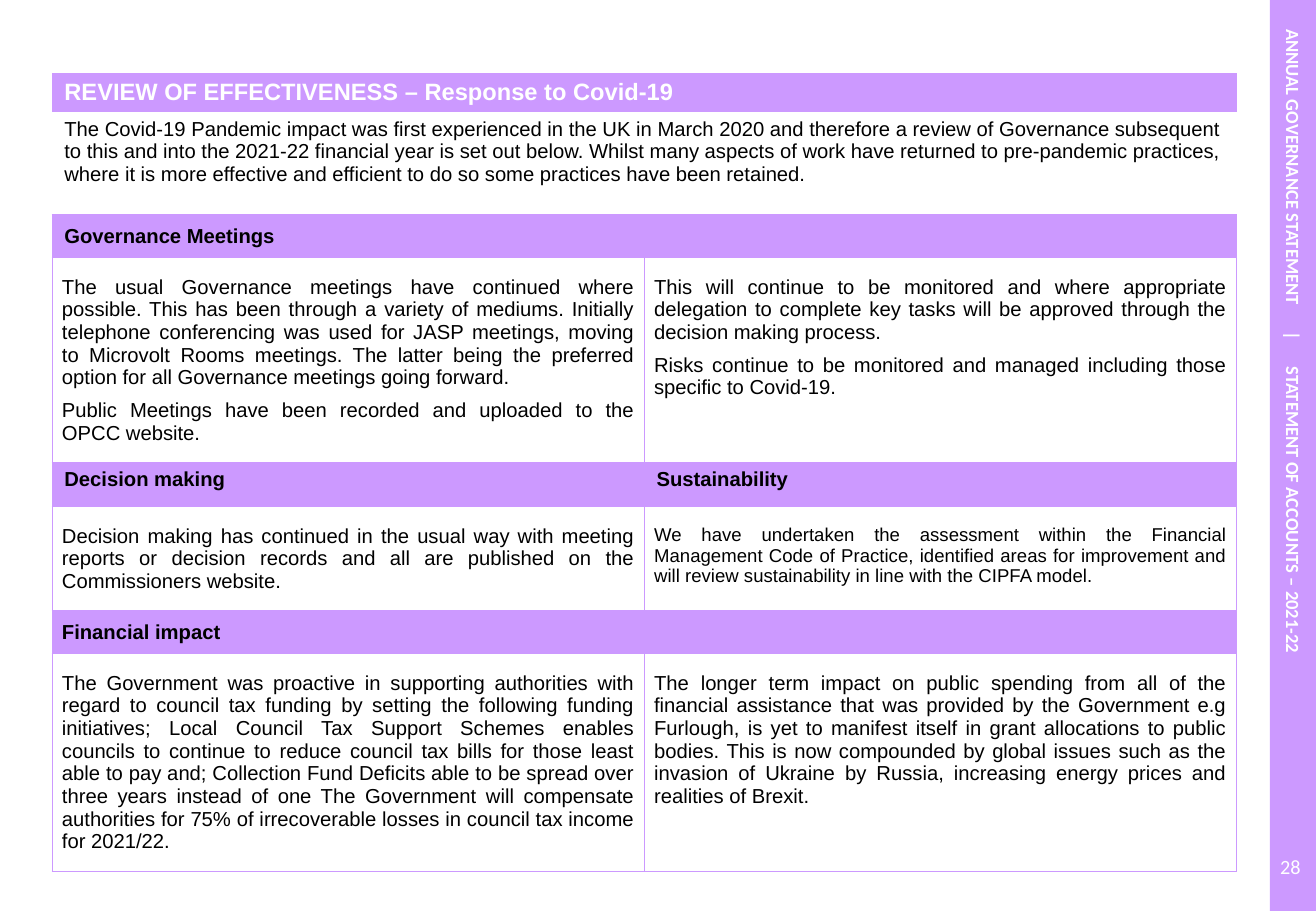
from lxml import etree
from pptx import Presentation
from pptx import util as u
from pptx.dml.color import RGBColor
from pptx.enum import shapes, text
from pptx.oxml import ns

COLORS = {"lilac": "CC99FF", "white": "FFFFFF", "black": "000000"}
PAGE_W, PAGE_H = 10.83, 7.5
HEADING = {"fill": "lilac", "bold": True, "anchor": "MIDDLE", "margins": (0.1, 0.04), "after": 6}
LABEL = HEADING | {"anchor": "TOP"}
BODY = {"margins": (0.08, 0.15), "after": 6}
TITLE = {"fill": "lilac", "bold": True, "anchor": "MIDDLE", "size": 14, "color": "white",
         "align": "LEFT", "borders": ""}
INTRO = {"align": "LEFT", "borders": "B"}
DEFAULTS = {"fill": None, "bold": False, "anchor": "TOP", "margins": (0.1, 0.05), "after": 0,
            "size": 12, "color": "black", "align": "JUSTIFY", "borders": "LRTB"}

review = [
    (0.32, TITLE, ["REVIEW OF EFFECTIVENESS – Response to Covid-19"]),
    (0.85, INTRO, [
        "The Covid-19 Pandemic impact was first experienced in the UK in March 2020 and therefore a review of "
        "Governance subsequent to this and into the 2021-22 financial year is set out below. Whilst many aspects "
        "of work have returned to pre-pandemic practices, where it is more effective and efficient to do so some "
        "practices have been retained."]),
    (0.35, HEADING, ["Governance Meetings"]),
    (1.68, BODY, [
        "The usual Governance meetings have continued where possible. This has been through a variety of mediums. "
        "Initially telephone conferencing was used for JASP meetings, moving to Microvolt Rooms meetings. The "
        "latter being the preferred option for all Governance meetings going forward.\n"
        "Public Meetings have been recorded and uploaded to the OPCC website.",
        "This will continue to be monitored and where appropriate delegation to complete key tasks will be "
        "approved through the decision making process.\n"
        "Risks continue to be monitored and managed including those specific to Covid-19."]),
    (0.36, LABEL, ["Decision making", "Sustainability"]),
    (0.86, BODY, [
        "Decision making has continued in the usual way with meeting reports or decision records and all are "
        "published on the Commissioners website.",
        "We have undertaken the assessment within the Financial Management Code of Practice, identified areas for "
        "improvement and will review sustainability in line with the CIPFA model."]),
    (0.35, HEADING | {"margins": (0.08, 0.04)}, ["Financial impact"]),
    (1.79, BODY | {"after": 8}, [
        "The Government was proactive in supporting authorities with regard to council tax funding by setting the "
        "following funding initiatives; Local Council Tax Support Schemes enables councils to continue to reduce "
        "council tax bills for those least able to pay and; Collection Fund Deficits able to be spread over three "
        "years instead of one The Government will compensate authorities for 75% of irrecoverable losses in "
        "council tax income for 2021/22.",
        "The longer term impact on public spending from all of the financial assistance that was provided by the "
        "Government e.g Furlough, is yet to manifest itself in grant allocations to public bodies. This is now "
        "compounded by global issues such as the invasion of Ukraine by Russia, increasing energy prices and "
        "realities of Brexit."]),
]


def style_font(font, **values):
    font.color.rgb = RGBColor.from_string(COLORS[values.pop("color")])
    for key, value in values.items():
        setattr(font, key, value)


def add_border(cell, side, position, visible):
    line = etree.Element(ns.qn(f"a:ln{side}"), w=str(u.Pt(1)))
    if visible:
        fill = etree.SubElement(line, ns.qn("a:solidFill"))
        etree.SubElement(fill, ns.qn("a:srgbClr"), val=COLORS["lilac"])
    else:
        etree.SubElement(line, ns.qn("a:noFill"))
    cell._tc.get_or_add_tcPr().insert(position, line)


deck = Presentation()
deck.slide_width, deck.slide_height = u.Inches(PAGE_W), u.Inches(PAGE_H)
page = deck.slides.add_slide(deck.slide_layouts[6])

total = sum(height for height, _, _ in review)
table = page.shapes.add_table(len(review), 2, u.Inches(0.43), u.Inches(PAGE_H * 0.08),
                              u.Inches(PAGE_W * 0.9), u.Inches(total)).table
table.first_row = table.horz_banding = False
for column in table.columns:
    column.width = u.Inches(PAGE_W * 0.45)

for index, (height, changes, contents) in enumerate(review):
    look = DEFAULTS | changes
    table.rows[index].height = u.Inches(height)
    if len(contents) == 1:
        table.cell(index, 0).merge(table.cell(index, 1))
    for cell in table.rows[index].cells:
        if look["fill"]:
            cell.fill.solid()
            cell.fill.fore_color.rgb = RGBColor.from_string(COLORS[look["fill"]])
        else:
            cell.fill.background()
        for position, side in enumerate("LRTB"):
            add_border(cell, side, position, side in look["borders"])
    for side, content in enumerate(contents):
        cell = table.cell(index, side)
        across, down = map(u.Inches, look["margins"])
        cell.margin_left = cell.margin_right = across
        cell.margin_top = cell.margin_bottom = down
        cell.vertical_anchor = text.MSO_ANCHOR[look["anchor"]]
        cell.text = content
        size = 11 if content.startswith("We have undertaken") else look["size"]
        for paragraph in cell.text_frame.paragraphs:
            paragraph.alignment = text.PP_ALIGN[look["align"]]
            paragraph.space_after = u.Pt(look["after"])
            style_font(paragraph.runs[0].font, name="Arial", size=u.Pt(size),
                       bold=look["bold"], color=look["color"])

sidebar = page.shapes.add_shape(shapes.MSO_SHAPE.RECTANGLE, u.Inches(10.45), 0,
                                u.Inches(0.39), u.Inches(PAGE_H))
sidebar.shadow.inherit = False
sidebar.fill.solid()
sidebar.fill.fore_color.rgb = RGBColor.from_string(COLORS["lilac"])
sidebar.line.fill.background()
page_number = page.shapes.add_textbox(u.Inches(10.47), u.Inches(6.93), u.Inches(0.3), u.Inches(0.4))
page_number.rotation = 270

for holder, words, align, size, bold in (
        (sidebar, "ANNUAL GOVERNANCE STATEMENT\t|\tSTATEMENT OF ACCOUNTS – 2021-22", "LEFT", 11, True),
        (page_number, "28", "CENTER", 12, False)):
    frame = holder.text_frame
    frame.word_wrap = True
    frame.vertical_anchor = text.MSO_ANCHOR.MIDDLE
    frame._txBody.bodyPr.set("vert", "vert")
    paragraph = frame.paragraphs[0]
    paragraph.alignment = text.PP_ALIGN[align]
    caption = paragraph.add_run()
    caption.text = words
    style_font(caption.font, name="Calibri", size=u.Pt(size), bold=bold, color="white")

sidebar.text_frame.margin_top = u.Inches(0.24)
stops = etree.SubElement(sidebar.text_frame.paragraphs[0]._p.get_or_add_pPr(), ns.qn("a:tabLst"))
for stop in (2.49, 2.78):
    etree.SubElement(stops, ns.qn("a:tab"), pos=str(u.Inches(stop)), algn="l")

deck.save("out.pptx")
